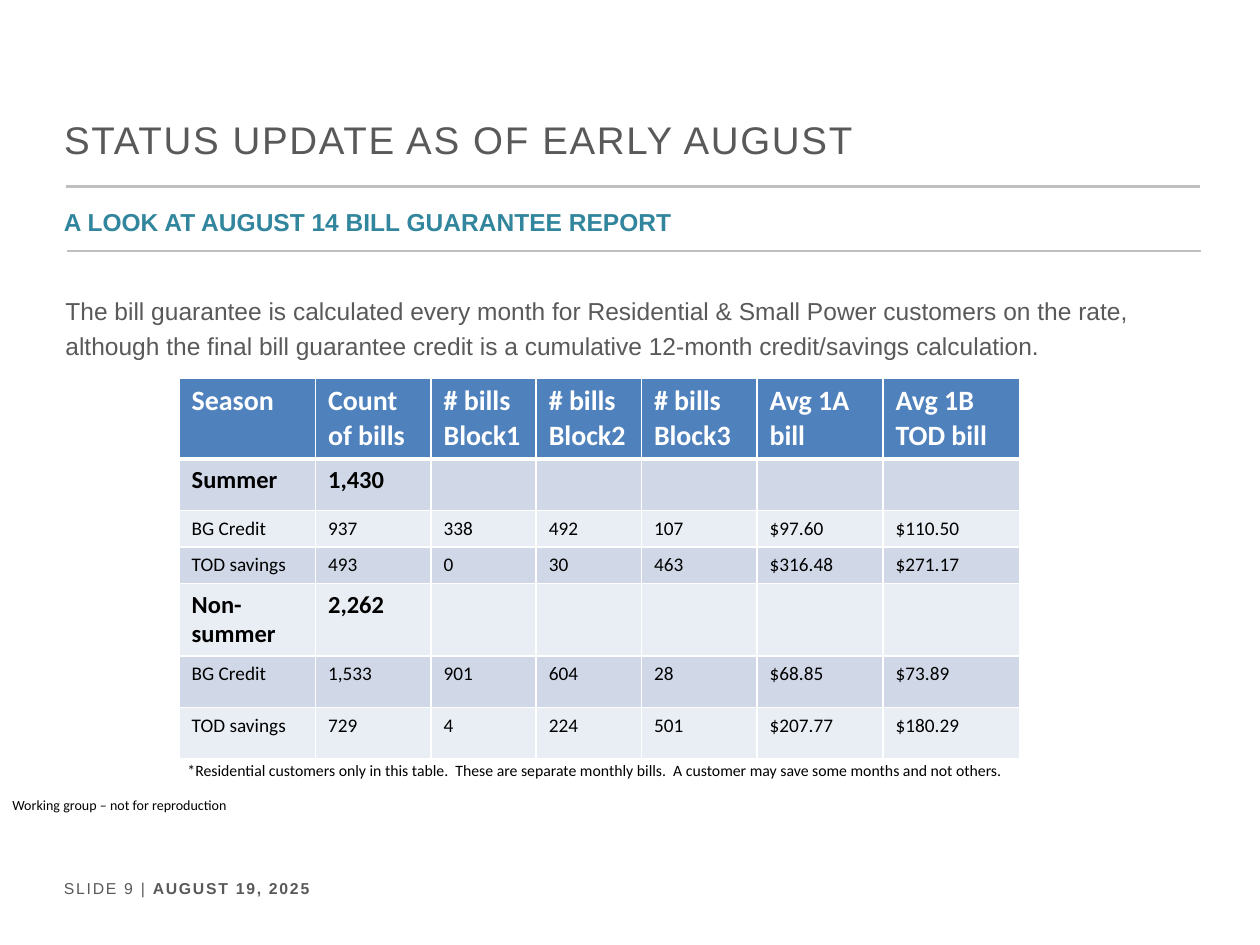
import pptx
import pptx.util
import pptx.dml.color
import pptx.enum.shapes
import pptx.enum.text
import pptx.oxml.ns
from dataclasses import dataclass
from lxml import etree
from pptx.util import Cm


@dataclass(frozen=True)
class Theme:
    head: str = "Arial"
    body: str = "Calibri"
    grey: str = "595959"
    rule: str = "BFBFBF"
    teal: str = "31859C"
    blue: str = "4F81BD"
    bands: tuple = ("D0D8E8", "E9EDF4")
    white: str = "FFFFFF"
    black: str = "000000"
    title: int = 22
    column: int = 16
    lead: int = 14
    data: int = 11
    small: int = 9
    tiny: int = 8


THEME = Theme()
MIDDLE = pptx.enum.text.MSO_ANCHOR.MIDDLE
TOP = pptx.enum.text.MSO_ANCHOR.TOP

WIDTHS = (2.75, 2.33, 2.12, 2.12, 2.33, 2.54, 2.75)
HEIGHTS = (1.04, 1.04, 0.52, 0.52, 1.04, 1.04, 1.04)
ROWS = (
    ("Season", "Count of bills", "# bills Block1", "# bills Block2",
     "# bills Block3", "Avg 1A bill", "Avg 1B TOD bill"),
    ("Summer", "1,430"),
    ("BG Credit", "937", "338", "492", "107", "$97.60", "$110.50"),
    ("TOD savings", "493", "0", "30", "463", "$316.48", "$271.17"),
    ("Non-summer", "2,262"),
    ("BG Credit", "1,533", "901", "604", "28", "$68.85", "$73.89"),
    ("TOD savings", "729", "4", "224", "501", "$207.77", "$180.29"),
)


def colour(code):
    return pptx.dml.color.RGBColor.from_string(code)


def write(par, words, font=THEME.body, size=THEME.data, ink=THEME.black,
          bold=False, track=0, lead=None):
    """Add a formatted run to a paragraph."""
    run = par.add_run()
    run.text = words
    run.font.name = font
    run.font.size = pptx.util.Pt(size)
    run.font.bold = bold
    run.font.color.rgb = colour(ink)
    if track:
        run.font._element.set("spc", str(track * 100))
    if lead:
        par.line_spacing = lead


def place(shape, left, top, width, height):
    shape.left, shape.top = Cm(left), Cm(top)
    shape.width, shape.height = Cm(width), Cm(height)


def frame(shape, anchor):
    """Set up a text frame and return its first paragraph."""
    body = shape.text_frame
    body.word_wrap = True
    body.auto_size = pptx.enum.text.MSO_AUTO_SIZE.NONE
    body.vertical_anchor = anchor
    par = body.paragraphs[0]
    par.alignment = pptx.enum.text.PP_ALIGN.LEFT
    return par


def box(slide, left, top, width, height, anchor=TOP):
    shape = slide.shapes.add_textbox(Cm(left), Cm(top), Cm(width), Cm(height))
    return frame(shape, anchor)


def rule(slide, left, top, width):
    line = slide.shapes.add_connector(
        pptx.enum.shapes.MSO_CONNECTOR.STRAIGHT,
        Cm(left), Cm(top), Cm(left + width), Cm(top))
    line.line.color.rgb = colour(THEME.rule)
    line.line.width = pptx.util.Pt(1.5)
    etree.SubElement(line._element.spPr, pptx.oxml.ns.qn("a:effectLst"))


def border(cell, top=1, bottom=1):
    """Draw white cell borders; widths are in points."""
    props = cell._tc.get_or_add_tcPr()
    for side, width in (("L", 1), ("R", 1), ("T", top), ("B", bottom)):
        edge = etree.SubElement(props, pptx.oxml.ns.qn("a:ln" + side),
                                w=str(pptx.util.Pt(width)))
        fill = etree.SubElement(edge, pptx.oxml.ns.qn("a:solidFill"))
        etree.SubElement(fill, pptx.oxml.ns.qn("a:srgbClr"), val=THEME.white)


def grid(slide, left, top):
    """Build the bill table; short rows are season totals."""
    table = slide.shapes.add_table(
        len(ROWS), len(WIDTHS), Cm(left), Cm(top),
        Cm(sum(WIDTHS)), Cm(sum(HEIGHTS))).table
    for col, width in zip(table.columns, WIDTHS):
        col.width = Cm(width)
    for r, (row, height) in enumerate(zip(ROWS, HEIGHTS)):
        table.rows[r].height = Cm(height)
        if r == 0:
            look = dict(size=THEME.column, ink=THEME.white, bold=True)
        elif len(row) < len(WIDTHS):
            look = dict(size=THEME.lead, bold=True)
        else:
            look = dict(size=THEME.data)
        for c in range(len(WIDTHS)):
            cell = table.cell(r, c)
            border(cell, top=3 if r == 1 else 1, bottom=3 if r == 0 else 1)
            cell.fill.solid()
            cell.fill.fore_color.rgb = colour(
                THEME.bands[(r - 1) % 2] if r else THEME.blue)
            if c < len(row):
                write(cell.text_frame.paragraphs[0], row[c], **look)


def main():
    deck = pptx.Presentation()
    deck.slide_width, deck.slide_height = Cm(25.4), Cm(19.05)
    slide = deck.slides.add_slide(deck.slide_layouts[5])

    # Rules around the subtitle
    rule(slide, 1.33, 3.76, 22.86)
    rule(slide, 1.35, 5.06, 22.86)

    # Title and subtitle
    title = slide.shapes.title
    place(title, 1.04, 2.06, 23.14, 1.47)
    write(frame(title, MIDDLE), "STATUS UPDATE AS OF EARLY AUGUST",
          font=THEME.head, size=THEME.title, ink=THEME.grey, track=1)
    write(box(slide, 1.04, 3.81, 23.11, 1.19, MIDDLE),
          "A LOOK AT AUGUST 14 BILL GUARANTEE REPORT",
          font=THEME.head, size=THEME.lead, ink=THEME.teal, bold=True, lead=1.2)

    # Introduction
    write(box(slide, 1.07, 5.72, 23.06, 1.91),
          "The bill guarantee is calculated every month for Residential & "
          "Small Power customers on the rate, although the final bill "
          "guarantee credit is a cumulative 12-month credit/savings "
          "calculation.",
          font=THEME.head, size=THEME.lead, ink=THEME.grey, lead=1.2)

    # Table and its footnote
    grid(slide, 3.61, 7.62)
    write(box(slide, 3.53, 15.21, 17.22, 0.64),
          "*Residential customers only in this table.  These are separate "
          "monthly bills.  A customer may save some months and not others.",
          size=THEME.small)

    # Notice and footer
    write(box(slide, 0, 15.93, 4.88, 0.61),
          "Working group – not for reproduction", size=THEME.tiny)
    foot = box(slide, 1.04, 17.58, 6.81, 0.64)
    look = dict(font=THEME.head, size=THEME.small, ink=THEME.grey, track=1)
    write(foot, "SLIDE 9 | ", **look)
    write(foot, "AUGUST 19, 2025", bold=True, **look)

    deck.save("out.pptx")


if __name__ == "__main__":
    main()
